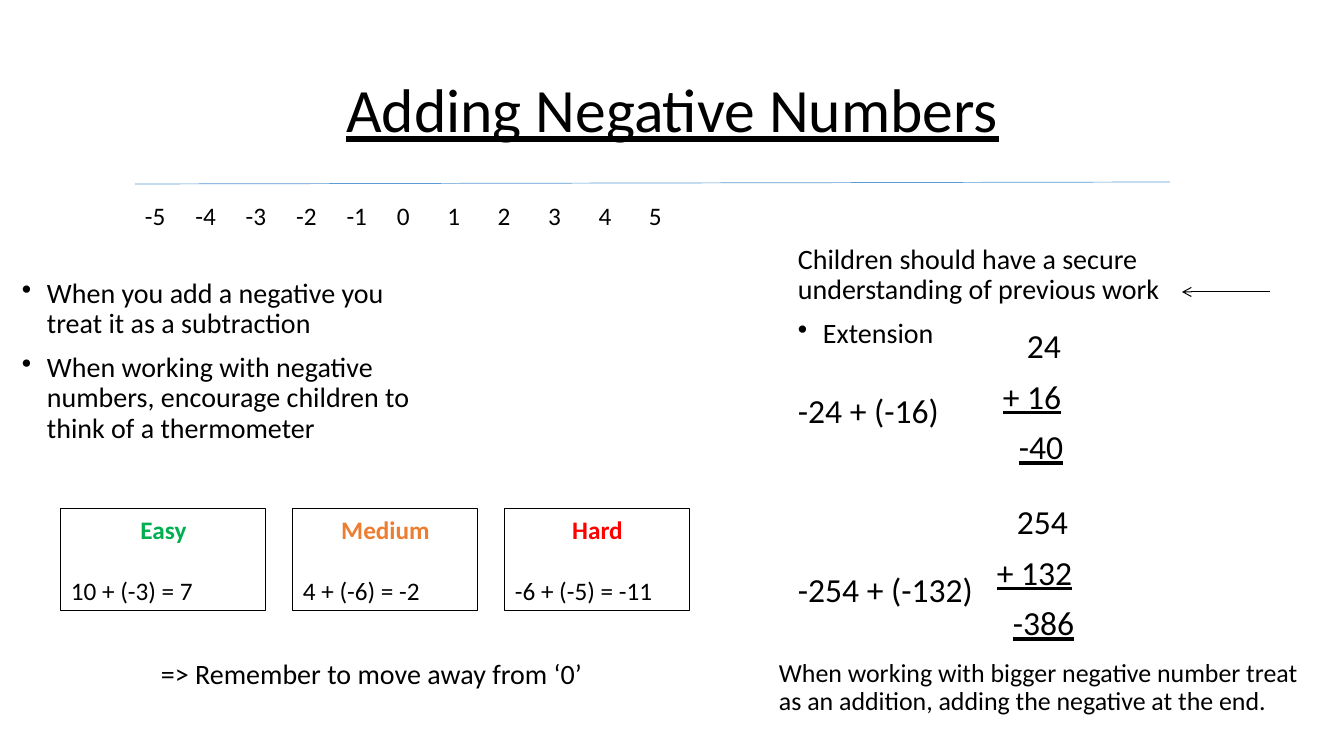
from dataclasses import dataclass

from lxml import etree
from pptx import Presentation
from pptx.dml.color import RGBColor
from pptx.enum.shapes import MSO_CONNECTOR, MSO_SHAPE
from pptx.enum.text import MSO_ANCHOR, PP_ALIGN
from pptx.oxml.ns import qn
from pptx.util import Pt

LEFT, CENTER = PP_ALIGN.LEFT, PP_ALIGN.CENTER
TOP, MIDDLE = MSO_ANCHOR.TOP, MSO_ANCHOR.MIDDLE
RECT, STRAIGHT = MSO_SHAPE.RECTANGLE, MSO_CONNECTOR.STRAIGHT


@dataclass(frozen=True)
class Theme:
    font: str = "Calibri"
    ink: str = "000000"
    axis: str = "5B9BD5"
    easy: str = "00B050"
    medium: str = "ED7D31"
    hard: str = "FF0000"
    title: float = 44
    sum: float = 24
    body: float = 20
    note: float = 18.5
    small: float = 18
    tight: float = 0.9
    gap: float = 10


THEME = Theme()
WIDE, HIGH = 1344, 756
SCALE = 12192000 / WIDE

TITLE = "Adding Negative Numbers"
TIPS = [
    "When you add a negative you treat it as a subtraction",
    "When working with negative numbers, encourage children to think of a thermometer",
]
CARDS = [  # level, example, colour, width
    ("Easy", "10 + (-3) = 7", THEME.easy, 205),
    ("Medium", "4 + (-6) = -2", THEME.medium, 185),
    ("Hard", "-6 + (-5) = -11", THEME.hard, 185),
]
REMIND = "=> Remember to move away from ‘0’"
EXTRA = [  # text, format
    ("Children should have a secure understanding of previous work", {}),
    ("Extension", {"bullet": True}),
    ("-24 + (-16)", {"size": THEME.sum, "before": 32}),
    ("-254 + (-132)", {"size": THEME.sum, "before": 102}),
]
SUMS = [  # left, top, rows of text and tab stop
    (993, 325, [("\t24", 24), ("+ 16", 0), ("\t-40", 16)]),
    (987, 501, [("\t254", 20), ("+ 132", 0), ("\t-386", 16)]),
]
ADVICE = ("When working with bigger negative number treat as an addition, "
          "adding the negative at the end.")


def emu(px):
    return round(px * SCALE)


def paint(hue):
    return RGBColor.from_string(hue)


def write(frame, words, size=THEME.body, color=THEME.ink, align=LEFT, bold=False,
          under=False, bullet=False, stop=0, before=THEME.gap, lead=THEME.tight):
    """Add one paragraph; the first in a frame takes no space before it."""
    first = not frame.text
    para = frame.paragraphs[0] if first else frame.add_paragraph()
    para.alignment = align
    para.line_spacing = lead
    para.space_before = Pt(0 if first else before)
    props = para._p.get_or_add_pPr()
    if bullet:
        props.set("marL", str(emu(25)))
        props.set("indent", str(-emu(25)))
        etree.SubElement(props, qn("a:buChar")).set("char", "•")
    if stop:
        tabs = etree.SubElement(props, qn("a:tabLst"))
        tab = etree.SubElement(tabs, qn("a:tab"))
        tab.set("pos", str(emu(stop)))
        tab.set("algn", "l")
    run = para.add_run()
    run.text = words
    font = run.font
    font.name, font.size = THEME.font, Pt(size)
    font.bold, font.underline = bold, under
    font.color.rgb = paint(color)


def box(slide, x, y, w, h, anchor=TOP):
    frame = slide.shapes.add_textbox(*map(emu, (x, y, w, h))).text_frame
    frame.word_wrap = True
    frame.vertical_anchor = anchor
    return frame


def rule(slide, start, end, color, width, arrow=False):
    line = slide.shapes.add_connector(STRAIGHT, *map(emu, start + end))
    line.line.color.rgb = paint(color)
    line.line.width = Pt(width)
    if arrow:
        tail = etree.SubElement(line.line._get_or_add_ln(), qn("a:tailEnd"))
        tail.set("type", "arrow")
    etree.SubElement(line._element.spPr, qn("a:effectLst"))


def card(slide, x, level, example, color, width):
    shape = slide.shapes.add_shape(RECT, *map(emu, (x, 509, width, 102)))
    shape.shadow.inherit = False
    shape.fill.background()
    shape.line.color.rgb = paint(THEME.ink)
    shape.line.width = Pt(0.75)
    frame = shape.text_frame
    frame.word_wrap = True
    frame.vertical_anchor = TOP
    write(frame, level, size=THEME.small, color=color, align=CENTER, bold=True, lead=1.0)
    write(frame, example, size=THEME.small, before=22, lead=1.0)


def main():
    deck = Presentation()
    deck.slide_width, deck.slide_height = emu(WIDE), emu(HIGH)
    slide = deck.slides.add_slide(deck.slide_layouts[6])

    write(box(slide, 93, 40, 1159, 146, MIDDLE), TITLE,
          size=THEME.title, align=CENTER, under=True)

    rule(slide, (135, 184), (1170, 182), THEME.axis, 0.5)
    scale = "\t".join(str(n) for n in range(-5, 6))
    write(box(slide, 135, 195, 1052, 72), scale, size=THEME.small, lead=1.0)

    tips = box(slide, 12, 274, 430, 246)
    for tip in TIPS:
        write(tips, tip, bullet=True)

    x = 61
    for level, example, color, width in CARDS:
        card(slide, x, level, example, color, width)
        x += width + 27
    write(box(slide, 151, 655, 471, 67), REMIND)

    extra = box(slide, 788, 240, 394, 435)
    for words, style in EXTRA:
        write(extra, words, **style)
    rule(slide, (1270, 292), (1182, 292), THEME.ink, 0.75, arrow=True)

    for x, y, rows in SUMS:
        frame = box(slide, x, y, 120, 176)
        for i, (words, stop) in enumerate(rows):
            write(frame, words, size=THEME.sum, under=i > 0, stop=stop)
    write(box(slide, 769, 655, 560, 73), ADVICE, size=THEME.note)

    deck.save("out.pptx")


if __name__ == "__main__":
    main()
